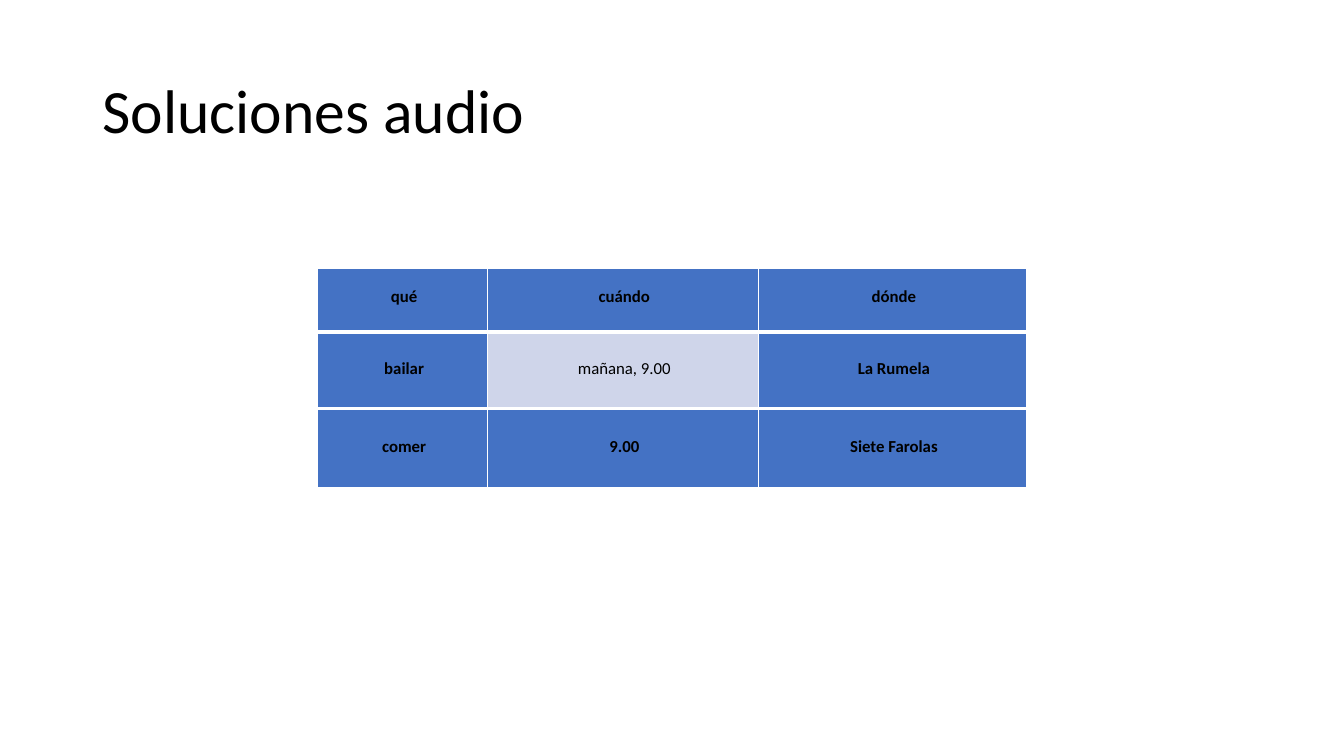
import pptx
import pptx.dml.color
import pptx.enum.text
import pptx.oxml
import pptx.oxml.ns
import pptx.util
from pptx.util import Cm, Pt

BLUE, PALE, WHITE, BLACK = "4472C4", "CFD5EA", "FFFFFF", "000000"


def color(value):
    return pptx.dml.color.RGBColor.from_string(value)


class Page:
    """Holds the text style and the current slide."""

    font = "Calibri"

    def __init__(self, deck):
        self.slide = deck.slides.add_slide(deck.slide_layouts[5])

    def style(self, para, size, bold=False):
        for span in para.runs:
            span.font.name = self.font
            span.font.size = Pt(size)
            span.font.bold = bold
            span.font.color.rgb = color(BLACK)

    def title(self, text, left, top, width, height):
        box = self.slide.shapes.title
        box.left, box.top, box.width, box.height = map(Cm, (left, top, width, height))
        frame = box.text_frame
        frame.text = text
        frame.word_wrap = True
        frame.vertical_anchor = pptx.enum.text.MSO_ANCHOR.MIDDLE
        para = frame.paragraphs[0]
        para.alignment = pptx.enum.text.PP_ALIGN.LEFT
        para.line_spacing = 0.9
        self.style(para, 44)

    def border(self, cell, side, width):
        line = pptx.oxml.parse_xml(
            f'<a:{side} {pptx.oxml.ns.nsdecls("a")} w="{Pt(width)}">'
            f'<a:solidFill><a:srgbClr val="{WHITE}"/></a:solidFill></a:{side}>')
        cell._tc.get_or_add_tcPr().append(line)

    def cell(self, cell, text, fill, bold, spacing, top, bottom):
        for side, width in (("lnL", 1), ("lnR", 1), ("lnT", top), ("lnB", bottom)):
            self.border(cell, side, width)
        cell.fill.solid()
        cell.fill.fore_color.rgb = color(fill)
        cell.margin_left = cell.margin_right = cell.margin_top = cell.margin_bottom = 0
        cell.vertical_anchor = pptx.enum.text.MSO_ANCHOR.MIDDLE
        cell.text_frame.text = text
        para = cell.text_frame.paragraphs[0]
        para._p.get_or_add_pPr().set("marL", str(Cm(0.08)))
        para.alignment = pptx.enum.text.PP_ALIGN.CENTER
        para.line_spacing = Pt(spacing)
        self.style(para, 12, bold)

    def table(self, rows, left, top, widths, heights, spacings, plain):
        table = self.slide.shapes.add_table(
            len(rows), len(widths), Cm(left), Cm(top),
            Cm(sum(widths)), Cm(sum(heights))).table
        for column, width in zip(table.columns, widths):
            column.width = Cm(width)
        last = len(rows) - 1
        for r, texts in enumerate(rows):
            table.rows[r].height = Cm(heights[r])
            for c, text in enumerate(texts):
                light = (r, c) == plain
                self.cell(table.cell(r, c), text, PALE if light else BLUE,
                          not light, spacings[r],
                          top=3 if r > 0 else 1, bottom=3 if r < last else 1)


def main():
    deck = pptx.Presentation()
    deck.slide_width, deck.slide_height = Cm(33.87), Cm(19.05)
    page = Page(deck)

    # Heading
    page.title("Soluciones audio", 2.33, 1.01, 29.21, 3.68)

    # Answers: what, when, where
    answers = [
        ("qué", "cuándo", "dónde"),
        ("bailar", "mañana, 9.00", "La Rumela"),
        ("comer", "9.00", "Siete Farolas"),
    ]
    page.table(answers, 8.01, 6.76, widths=(4.27, 6.83, 6.76),
               heights=(1.6, 1.93, 2), spacings=(10.3, 12.4, 12.8), plain=(1, 1))

    deck.save("out.pptx")


if __name__ == "__main__":
    main()
